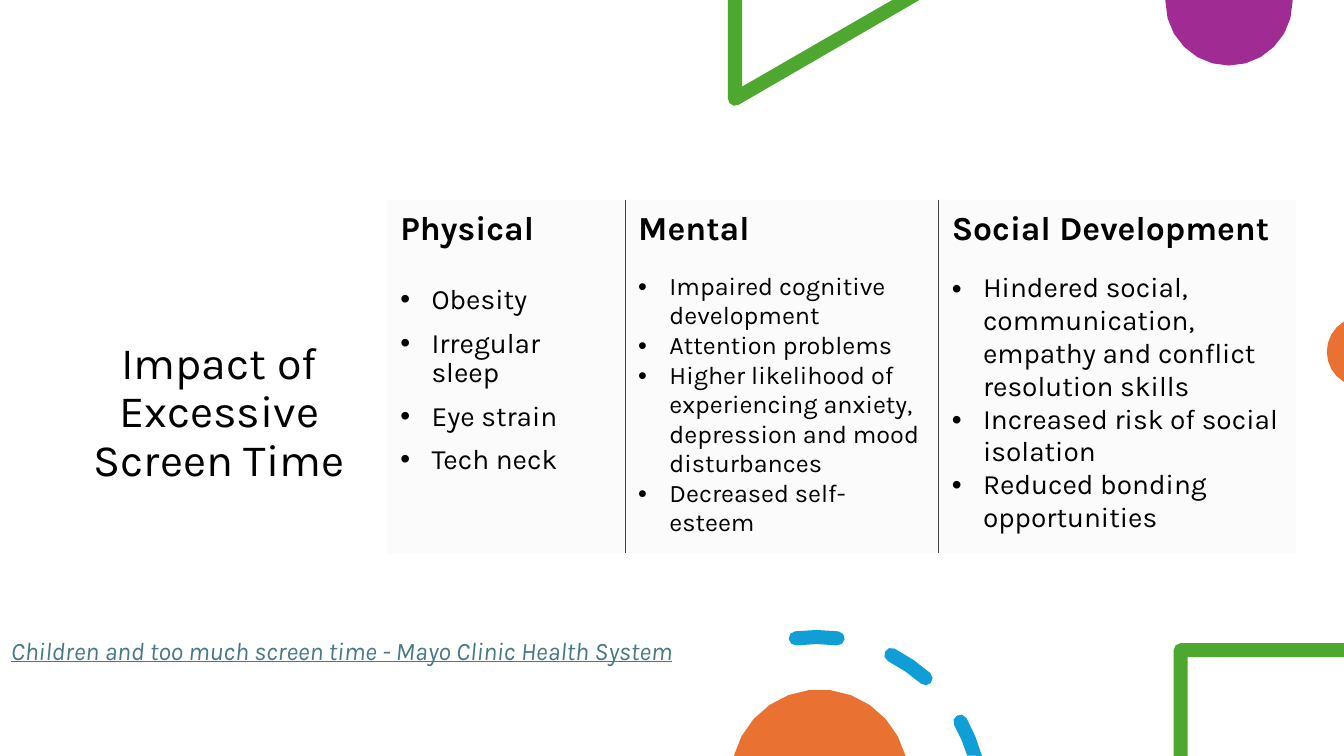
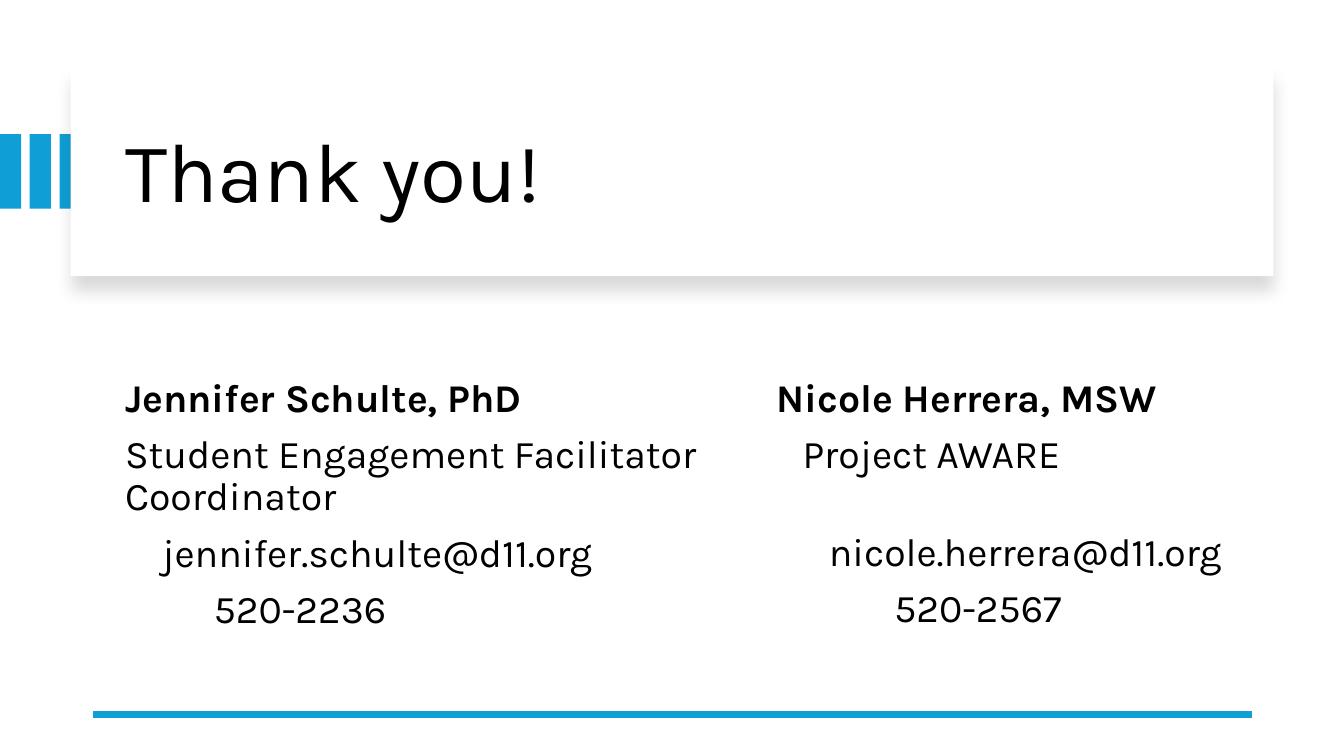
from dataclasses import dataclass
from math import ceil, cos, radians, sin

from lxml.etree import SubElement
from pptx import Presentation
from pptx.dml.color import RGBColor
from pptx.enum.shapes import MSO_CONNECTOR, MSO_SHAPE
from pptx.enum.text import MSO_ANCHOR, MSO_AUTO_SIZE, PP_ALIGN
from pptx.oxml.ns import qn
from pptx.util import Inches, Pt


@dataclass(frozen=True)
class Theme:
    font: str = "Karla"
    ink: str = "000000"
    paper: str = "FFFFFF"
    green: str = "4EA72E"
    purple: str = "A02B93"
    orange: str = "E97132"
    blue: str = "0F9ED5"
    link: str = "467886"
    cell: str = "F2F2F2"
    rule: str = "404040"
    heading: int = 24
    source: int = 18
    impact_title: int = 32
    thanks_title: int = 60
    contact: int = 28
    tight: float = 0.9


THEME = Theme()
WIDTH, HEIGHT = 13.33, 7.5

IMPACT_TITLE = "Impact of Excessive Screen Time"
IMPACTS = [
    {"heading": "Physical", "width": 2.36, "size": 20, "leading": THEME.tight,
     "first_gap": 26.6, "gap": 10,
     "items": ["Obesity", "Irregular sleep", "Eye strain", "Tech neck"]},
    {"heading": "Mental", "width": 3.11, "size": 18, "leading": 1.0,
     "first_gap": 16.7, "gap": 0,
     "items": ["Impaired cognitive development", "Attention problems",
               "Higher likelihood of experiencing anxiety, depression and mood disturbances",
               "Decreased self-esteem\u00a0"]},
    {"heading": "Social Development", "width": 3.54, "size": 20, "leading": 1.0,
     "first_gap": 16.7, "gap": 0,
     "items": ["Hindered social, communication, empathy and conflict resolution skills",
               "Increased risk of social isolation",
               "Reduced bonding opportunities"]},
]
SOURCE = "Children and too much screen time - Mayo Clinic Health System"

THANKS_TITLE = "Thank you!"
LINE_GAP, SKIPPED_LINE = 10, 29.5
CONTACTS = [
    {"left": 1.14, "width": 6.0, "lines": [
        ("Jennifer Schulte, PhD", 0, 0),
        ("Student Engagement Facilitator Coordinator", 0, LINE_GAP),
        ("jennifer.schulte@d11.org", 0.37, LINE_GAP),
        ("520-2236", 0.88, LINE_GAP)]},
    {"left": 7.6, "width": 5.03, "lines": [
        ("Nicole Herrera, MSW", 0, 0),
        ("Project AWARE", 0.26, LINE_GAP),
        ("nicole.herrera@d11.org", 0.52, LINE_GAP + SKIPPED_LINE),
        ("520-2567", 1.17, LINE_GAP)]},
]


def rgb(color):
    return RGBColor.from_string(color)


def box(*lengths):
    return [Inches(length) for length in lengths]


def paint(shape, color):
    shape.fill.solid()
    shape.fill.fore_color.rgb = rgb(color)
    shape.line.fill.background()
    shape.shadow.inherit = False


def style(paragraph, size, color=THEME.ink, bold=False, leading=1.0, before=0):
    paragraph.line_spacing = leading
    paragraph.space_before = Pt(before)
    font = paragraph.font
    font.name, font.size, font.bold = THEME.font, Pt(size), bold
    font.color.rgb = rgb(color)


def place(placeholder, bounds, anchor):
    placeholder.left, placeholder.top, placeholder.width, placeholder.height = box(*bounds)
    frame = placeholder.text_frame
    frame.word_wrap = True
    frame.auto_size = MSO_AUTO_SIZE.NONE
    frame.vertical_anchor = anchor
    return frame


def set_title(slide, text, bounds, size, anchor, align):
    frame = place(slide.shapes.title, bounds, anchor)
    frame.text = text
    paragraph = frame.paragraphs[0]
    paragraph.alignment = align
    style(paragraph, size, leading=THEME.tight)


def arc(x, y, radius, start, end):
    steps = max(2, ceil(abs(end - start) / (15 if radius > 0.2 else 45)))
    angles = [radians(start + (end - start) * i / steps) for i in range(steps + 1)]
    return [(x + radius * sin(a), y - radius * cos(a)) for a in angles]


def dash(x, y, radius, start, end, half=0.07, clipped=False):
    def on_ring(angle):
        return x + radius * sin(radians(angle)), y - radius * cos(radians(angle))

    inner_end, outer_end = (end - 0.9, end + 0.6) if clipped else (end, end)
    end_cap = [] if clipped else arc(*on_ring(end), half, end + 90, end + 180)
    if not clipped:
        end_cap = arc(*on_ring(end), half, end, end + 180)[1:-1]
    return (arc(x, y, radius + half, start, outer_end) + end_cap
            + arc(x, y, radius - half, inner_end, start)
            + arc(*on_ring(start), half, start + 180, start + 360)[1:-1])


def outline(slide, color, *contours):
    scaled = [[(round(x * 1000), round(y * 1000)) for x, y in points] for points in contours]
    builder = slide.shapes.build_freeform(*scaled[0][0], scale=Inches(1) / 1000)
    for index, points in enumerate(scaled):
        if index:
            builder.move_to(*points[0])
        builder.add_line_segments(points[1:], close=True)
    paint(builder.convert_to_shape(), color)


def decorate(slide):
    outline(slide, THEME.green,
            [(7.22, 0), (7.36, 0), (7.36, 0.86), (8.85, 0), (9.12, 0)]
            + arc(7.29, 0.98, 0.07, 150, 270))
    outline(slide, THEME.purple, [(11.56, 0), (12.82, 0)] + arc(12.19, 0.02, 0.63, 90, 270))
    outline(slide, THEME.orange, arc(13.51, 3.49, 0.35, 211, 329))
    ring = (8.1, 7.95, 1.63)
    outline(slide, THEME.blue, dash(*ring, 61, 74, clipped=True),
            dash(*ring, 27, 41.5), dash(*ring, -7.3, 7.3))
    outline(slide, THEME.orange, arc(8.13, 7.72, 0.88, -75.5, 75.5))
    outline(slide, THEME.green,
            [(11.64, HEIGHT)] + arc(11.71, 6.45, 0.07, 270, 360)
            + [(WIDTH, 6.38), (WIDTH, 6.52), (11.78, 6.52), (11.78, HEIGHT)])


def indent(paragraph, left, first=0):
    properties = paragraph._p.get_or_add_pPr()
    properties.set("marL", str(Inches(left)))
    properties.set("indent", str(Inches(first)))
    return properties


def add_bullet(paragraph):
    properties = indent(paragraph, 0.31, -0.31)
    SubElement(properties, qn("a:buFont"), typeface="Arial")
    SubElement(properties, qn("a:buChar"), char="•")


def add_rule(cell, side):
    line = SubElement(cell._tc.get_or_add_tcPr(), qn(f"a:ln{side}"), w=str(Pt(0.5)))
    SubElement(SubElement(line, qn("a:solidFill")), qn("a:srgbClr"), val=THEME.rule)


def fill_cell(cell, impact, sides):
    cell.margin_left, cell.margin_top, cell.margin_right, cell.margin_bottom = box(
        0.13, 0.1, 0.11, 0.1)
    cell.vertical_anchor = MSO_ANCHOR.TOP
    for side in sides:
        add_rule(cell, side)
    cell.fill.solid()
    cell.fill.fore_color.rgb = rgb(THEME.cell)
    tint = cell._tc.tcPr.find(qn("a:solidFill")).find(qn("a:srgbClr"))
    SubElement(tint, qn("a:alpha"), val="30000")

    heading = cell.text_frame.paragraphs[0]
    heading.text = impact["heading"]
    style(heading, THEME.heading, bold=True)
    for index, item in enumerate(impact["items"]):
        paragraph = cell.text_frame.add_paragraph()
        paragraph.text = item
        add_bullet(paragraph)
        style(paragraph, impact["size"], leading=impact["leading"],
              before=impact["gap"] if index else impact["first_gap"])


def add_impact_table(slide):
    total = sum(impact["width"] for impact in IMPACTS)
    frame = slide.shapes.add_table(1, len(IMPACTS), *box(3.84, 1.98, total, 3.51))
    table = frame.table
    table.first_row = table.horz_banding = False
    table._tbl.tblPr.find(qn("a:tableStyleId")).text = "{2D5ABB26-0587-4C30-8999-92F81FD0307C}"
    last = len(IMPACTS) - 1
    for index, impact in enumerate(IMPACTS):
        table.columns[index].width = Inches(impact["width"])
        sides = ("L" if index else "") + ("R" if index < last else "")
        fill_cell(table.cell(0, index), impact, sides)


def build_impact(deck):
    slide = deck.slides.add_slide(deck.slide_layouts[5])
    set_title(slide, IMPACT_TITLE, (0.64, 2.16, 3.07, 2.71), THEME.impact_title,
              MSO_ANCHOR.BOTTOM, PP_ALIGN.CENTER)
    SubElement(slide.shapes.title._element.spPr, qn("a:prstGeom"), prst="ellipse")
    decorate(slide)
    add_impact_table(slide)
    source = slide.shapes.add_textbox(*box(0.01, 6.25, 7.59, 0.4)).text_frame
    source.word_wrap = True
    source.text = SOURCE
    paragraph = source.paragraphs[0]
    style(paragraph, THEME.source, THEME.link)
    paragraph.font.italic = paragraph.font.underline = True


def add_card(slide):
    stripes = slide.shapes.add_group_shape()
    for index in range(3):
        stripe = stripes.shapes.add_shape(
            MSO_SHAPE.RECTANGLE, *box(0.59 * index / 2, 1.33, 0.21, 0.74))
        paint(stripe, THEME.blue)
    card = slide.shapes.add_shape(MSO_SHAPE.RECTANGLE, *box(0.7, 0.67, 11.93, 2.07))
    paint(card, THEME.paper)
    effects = card._element.spPr.find(qn("a:effectLst"))
    shadow = SubElement(effects, qn("a:outerShdw"), blurRad=str(Pt(11)), dist=str(Pt(10)),
                        dir="5400000", algn="t", rotWithShape="0")
    shade = SubElement(shadow, qn("a:srgbClr"), val=THEME.ink)
    SubElement(shade, qn("a:alpha"), val="15000")


def fill_contact(placeholder, contact):
    frame = place(placeholder, (contact["left"], 3.3, contact["width"], 3.42),
                  MSO_ANCHOR.MIDDLE)
    for index, (text, left, before) in enumerate(contact["lines"]):
        paragraph = frame.add_paragraph() if index else frame.paragraphs[0]
        paragraph.text = text
        SubElement(indent(paragraph, left), qn("a:buNone"))
        style(paragraph, THEME.contact, bold=index == 0, leading=THEME.tight, before=before)


def build_thanks(deck):
    slide = deck.slides.add_slide(deck.slide_layouts[3])
    add_card(slide)
    set_title(slide, THANKS_TITLE, (1.14, 0.89, 10.87, 1.7), THEME.thanks_title,
              MSO_ANCHOR.MIDDLE, PP_ALIGN.LEFT)
    columns = [slide.placeholders[1], slide.placeholders[2]]
    for column, contact in zip(columns, CONTACTS):
        fill_contact(column, contact)
    for part in (slide.shapes.title, *columns):
        slide.shapes._spTree.append(part._element)

    footer_rule = slide.shapes.add_connector(
        MSO_CONNECTOR.STRAIGHT, *box(12.42, 7.09, 0.92, 7.09))
    footer_rule.line.color.rgb = rgb(THEME.blue)
    footer_rule.line.width = Pt(4.5)
    SubElement(footer_rule._element.spPr, qn("a:effectLst"))


def main():
    deck = Presentation()
    deck.slide_width, deck.slide_height = box(WIDTH, HEIGHT)
    build_impact(deck)
    build_thanks(deck)
    deck.save("out.pptx")


if __name__ == "__main__":
    main()
